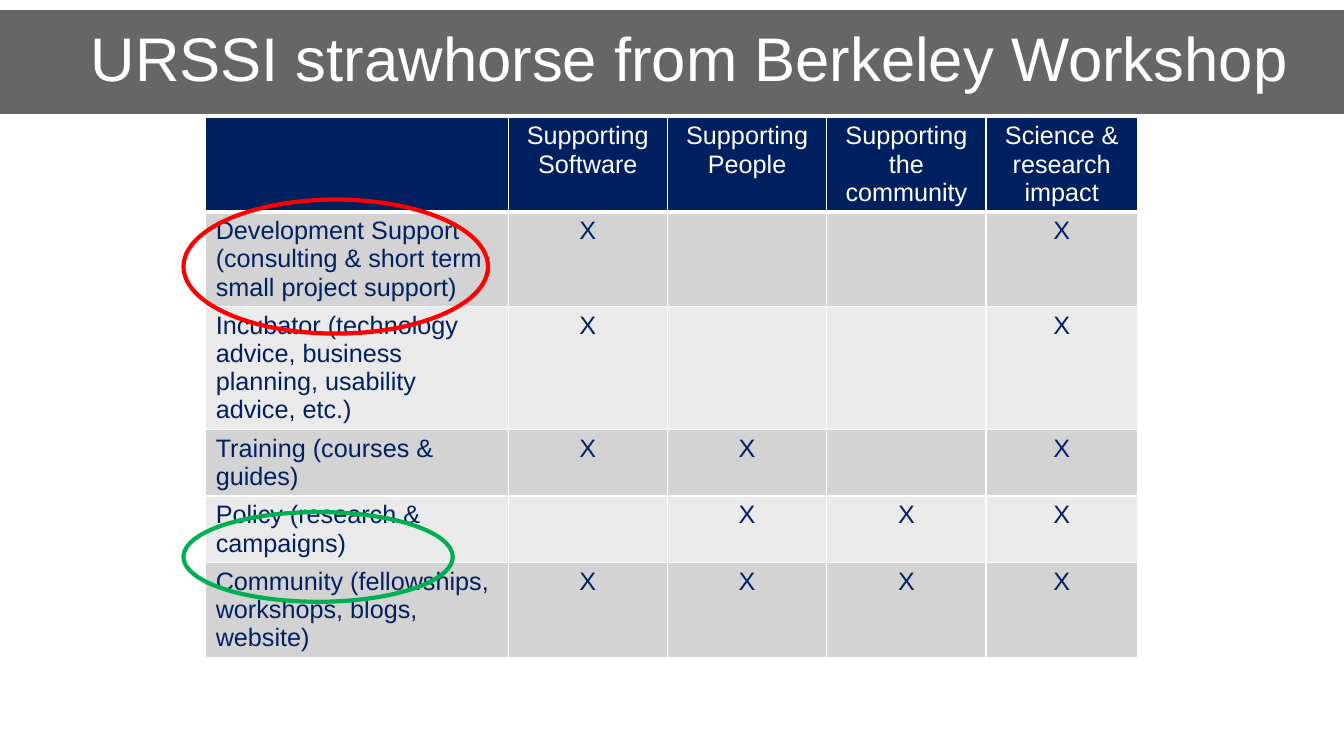
from lxml import etree
from pptx import Presentation
from pptx import util as u
from pptx.dml.color import RGBColor
from pptx.enum import shapes, text
from pptx.oxml import ns

WIDTH, HEIGHT = u.Inches(13.33), u.Inches(7.5)
WHITE = RGBColor(0xFF, 0xFF, 0xFF)
GREY = RGBColor(0x66, 0x66, 0x66)
NAVY = RGBColor(0x00, 0x20, 0x60)
DARK_BAND = RGBColor(0xD3, 0xD3, 0xD3)
LIGHT_BAND = RGBColor(0xEA, 0xEA, 0xEA)
RED = RGBColor(0xFF, 0x00, 0x00)
GREEN = RGBColor(0x00, 0xB0, 0x50)
FONT = "Arial"

COLUMN_WIDTHS = [3, 1.58, 1.58, 1.58, 1.5]
ROW_HEIGHT = 0.41
HEADINGS = ["", "Supporting Software", "Supporting People",
            "Supporting the community", "Science & research impact"]
ACTIVITIES = [
    ("Development Support (consulting & short term small project support)", "X", "", "", "X"),
    ("Incubator (technology advice, business planning, usability advice, etc.)", "X", "", "", "X"),
    ("Training (courses & guides)", "X", "X", "", "X"),
    ("Policy (research & campaigns)", "", "X", "X", "X"),
    ("Community (fellowships, workshops, blogs, website)", "X", "X", "X", "X"),
]


def format_font(font, size, colour):
    font.name = FONT
    font.size = u.Pt(size)
    font.color.rgb = colour


def add_title(slide, wording):
    title = slide.shapes.title
    title.left, title.top = 0, u.Inches(0.1)
    title.width, title.height = WIDTH, u.Inches(1.03)
    title.fill.solid()
    title.fill.fore_color.rgb = GREY
    frame = title.text_frame
    frame.text = wording
    frame.auto_size = text.MSO_AUTO_SIZE.NONE
    frame.vertical_anchor = text.MSO_ANCHOR.MIDDLE
    heading = frame.paragraphs[0]
    heading.alignment = text.PP_ALIGN.LEFT
    heading.line_spacing = 0.9
    properties = heading._p.get_or_add_pPr()
    properties.set("marL", str(u.Inches(0.8)))
    properties.set("indent", "0")
    format_font(heading.runs[0].font, 44, WHITE)


def add_borders(cell, bottom_width):
    properties = cell._tc.get_or_add_tcPr()
    widths = {"a:lnL": 1, "a:lnR": 1, "a:lnT": 1, "a:lnB": bottom_width}
    for position, (side, width) in enumerate(widths.items()):
        border = etree.Element(ns.qn(side), w=str(u.Pt(width)))
        fill = etree.SubElement(border, ns.qn("a:solidFill"))
        etree.SubElement(fill, ns.qn("a:srgbClr"), val=str(WHITE))
        properties.insert(position, border)


def fill_cell(cell, wording, band, colour, centred, bottom_width):
    cell.fill.solid()
    cell.fill.fore_color.rgb = band
    add_borders(cell, bottom_width)
    cell.text_frame.text = wording
    entry = cell.text_frame.paragraphs[0]
    entry.alignment = text.PP_ALIGN.CENTER if centred else text.PP_ALIGN.LEFT
    format_font(entry.font, 18, colour)
    for run in entry.runs:
        format_font(run.font, 18, colour)


def add_matrix(slide):
    rows = [HEADINGS, *ACTIVITIES]
    matrix = slide.shapes.add_table(
        len(rows), len(COLUMN_WIDTHS), u.Inches(2.04), u.Inches(1.16),
        u.Inches(sum(COLUMN_WIDTHS)), u.Inches(ROW_HEIGHT * len(rows))).table
    for column, width in zip(matrix.columns, COLUMN_WIDTHS):
        column.width = u.Inches(width)
    for r, row in enumerate(rows):
        matrix.rows[r].height = u.Inches(ROW_HEIGHT)
        is_header = r == 0
        band = NAVY if is_header else DARK_BAND if r % 2 else LIGHT_BAND
        colour = WHITE if is_header else NAVY
        for c, wording in enumerate(row):
            fill_cell(matrix.cell(r, c), wording, band, colour, c > 0,
                      3 if is_header else 1)


def add_ring(slide, top, width, height, colour):
    ring = slide.shapes.add_shape(
        shapes.MSO_SHAPE.OVAL, u.Inches(1.82), u.Inches(top),
        u.Inches(width), u.Inches(height))
    ring.shadow.inherit = False
    ring.fill.background()
    ring.line.color.rgb = colour
    ring.line.width = u.Pt(3)


def main():
    deck = Presentation()
    deck.slide_width, deck.slide_height = WIDTH, HEIGHT
    slide = deck.slides.add_slide(deck.slide_layouts.get_by_name("Title Only"))
    add_title(slide, "URSSI strawhorse from Berkeley Workshop")
    add_matrix(slide)
    add_ring(slide, 1.98, 3.02, 1.33, RED)
    add_ring(slide, 5.08, 2.67, 0.89, GREEN)
    deck.save("out.pptx")


if __name__ == "__main__":
    main()
